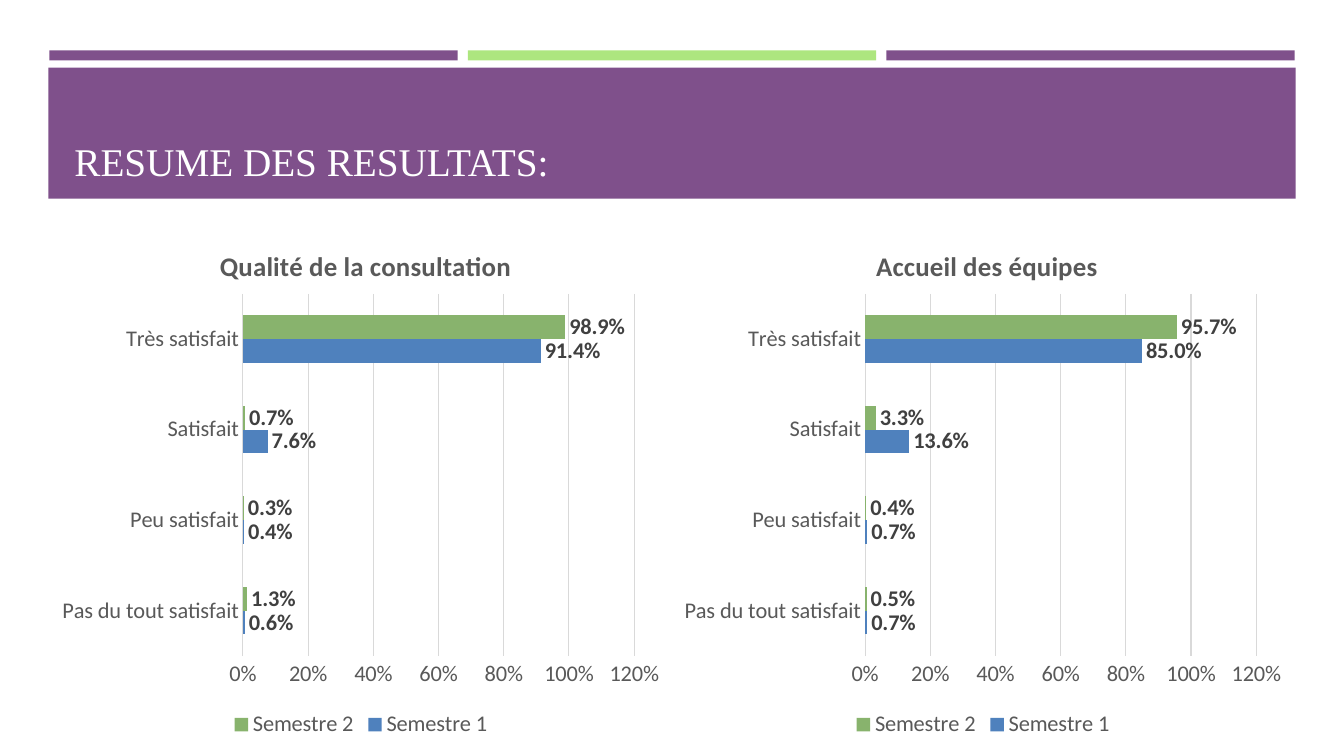
"""Builds the slide that sums up the survey results in two bar charts."""
from lxml import etree
from pptx import Presentation
from pptx import util as u
from pptx.chart.data import CategoryChartData
from pptx.dml.color import RGBColor
from pptx.enum import chart as charts, shapes, text
from pptx.oxml import parse_xml
from pptx.oxml.ns import nsdecls

COLOURS = {"purple": "7F508B", "lime": "ADE67F", "white": "FFFFFF", "grey": "595959",
           "dark": "404040", "grid": "D9D9D9", "blue": "4F81BD", "green": "88B36D"}
TITLE = "RESUME DES RESULTATS:"
STRIPES = ["purple", "lime", "purple"]
CATEGORIES = ["Pas du tout satisfait", "Peu satisfait", "Satisfait", "Très satisfait"]
SERIES_COLOURS = {"Semestre 1": "blue", "Semestre 2": "green"}
CHARTS = [
    {"title": "Qualité de la consultation", "title_x": 0.265,
     "Semestre 1": [0.006, 0.004, 0.076, 0.914], "Semestre 2": [0.013, 0.003, 0.007, 0.989]},
    {"title": "Accueil des équipes", "title_x": 0.32,
     "Semestre 1": [0.007, 0.007, 0.136, 0.85], "Semestre 2": [0.005, 0.004, 0.033, 0.957]},
]
PLOT_AREA = {"x": 0.31, "y": 0.145, "w": 0.63, "h": 0.69}
TITLE_Y = 0.047


def colour(name):
    return RGBColor.from_string(COLOURS[name])


def set_font(font, size, name, typeface="Calibri", bold=False):
    font.size, font.name, font.bold = u.Pt(size), typeface, bold
    font.color.rgb = colour(name)


def add_bar(slide, left, top, width, height, name):
    shape = slide.shapes.add_shape(shapes.MSO_SHAPE.RECTANGLE, *map(u.Inches, (left, top, width, height)))
    shape.shadow.inherit = False
    shape.fill.solid()
    shape.fill.fore_color.rgb = colour(name)
    shape.line.fill.background()


def add_title(slide):
    box = slide.shapes.add_textbox(*map(u.Inches, (0.64, 0.77, 12.06, 1.11)))
    frame = box.text_frame
    frame.word_wrap = True
    frame.vertical_anchor = text.MSO_ANCHOR.BOTTOM
    run = frame.paragraphs[0].add_run()
    run.text = TITLE
    set_font(run.font, 28, "white", "Times New Roman")


def place(element, before, target=None, **position):
    """Gives a chart part a fixed place, as fractions of the chart."""
    for old in element.findall("{*}layout"):
        element.remove(old)
    layout = parse_xml(f"<c:layout {nsdecls('c')}><c:manualLayout/></c:layout>")
    tag = "{%s}" % layout.nsmap["c"]
    settings = {"layoutTarget": target} if target else {}
    settings |= {"xMode": "edge", "yMode": "edge"} | position
    for key, value in settings.items():
        etree.SubElement(layout[0], tag + key).set("val", str(value))
    if before is None:
        element.insert(0, layout)
    else:
        element.find(tag + before).addnext(layout)


def style_axes(chart):
    category, value = chart.category_axis, chart.value_axis
    for axis in (category, value):
        axis.major_tick_mark = axis.minor_tick_mark = charts.XL_TICK_MARK.NONE
        set_font(axis.tick_labels.font, 16, "grey")
    value.minimum_scale, value.maximum_scale, value.major_unit = 0, 1.2, 0.2
    value.tick_labels.number_format = "0%"
    value.tick_labels.number_format_is_linked = False
    value.format.line.fill.background()
    value.has_major_gridlines = True
    for line in (category.format.line, value.major_gridlines.format.line):
        line.color.rgb = colour("grid")
        line.width = u.Pt(0.75)


def style_series(series):
    series.format.fill.solid()
    series.format.fill.fore_color.rgb = colour(SERIES_COLOURS[series.name])
    series.invert_if_negative = False
    labels = series.data_labels
    labels.show_value = True
    labels.number_format, labels.number_format_is_linked = "0.0%", False
    labels.position = charts.XL_LABEL_POSITION.OUTSIDE_END
    set_font(labels.font, 16, "dark", bold=True)


def add_survey_chart(slide, left, survey):
    data = CategoryChartData(number_format="0.0%")
    data.categories = CATEGORIES
    for name in SERIES_COLOURS:
        data.add_series(name, survey[name])
    chart = slide.shapes.add_chart(charts.XL_CHART_TYPE.BAR_CLUSTERED,
                                   *map(u.Inches, (left, 2.16, 6.16, 5.21)), data).chart
    chart.font.size, chart.font.name = u.Pt(16), "Calibri"
    run = chart.chart_title.text_frame.paragraphs[0].add_run()
    run.text = survey["title"]
    set_font(run.font, 19.2, "grey", bold=True)
    chart.chart_title.include_in_layout = False
    style_axes(chart)
    plot = chart.plots[0]
    plot.gap_width, plot.overlap, plot.vary_by_categories = 182, 0, False
    for series in plot.series:
        style_series(series)
    chart.has_legend = True
    chart.legend.position = charts.XL_LEGEND_POSITION.BOTTOM
    chart.legend.include_in_layout = False
    set_font(chart.legend.font, 16, "grey")
    place(chart.chart_title._element, "tx", x=survey["title_x"], y=TITLE_Y)
    place(plot._element.getparent(), None, "inner", **PLOT_AREA)


def main():
    presentation = Presentation()
    presentation.slide_width, presentation.slide_height = u.Inches(13.33), u.Inches(7.5)
    slide = presentation.slides.add_slide(presentation.slide_layouts[6])
    for index, name in enumerate(STRIPES):
        add_bar(slide, 0.49 + index * 4.15, 0.5, 4.05, 0.1, name)
    add_bar(slide, 0.48, 0.67, 12.37, 1.3, "purple")
    add_title(slide)
    for index, survey in enumerate(CHARTS):
        add_survey_chart(slide, 0.5 + index * 6.17, survey)
    presentation.save("out.pptx")


if __name__ == "__main__":
    main()
